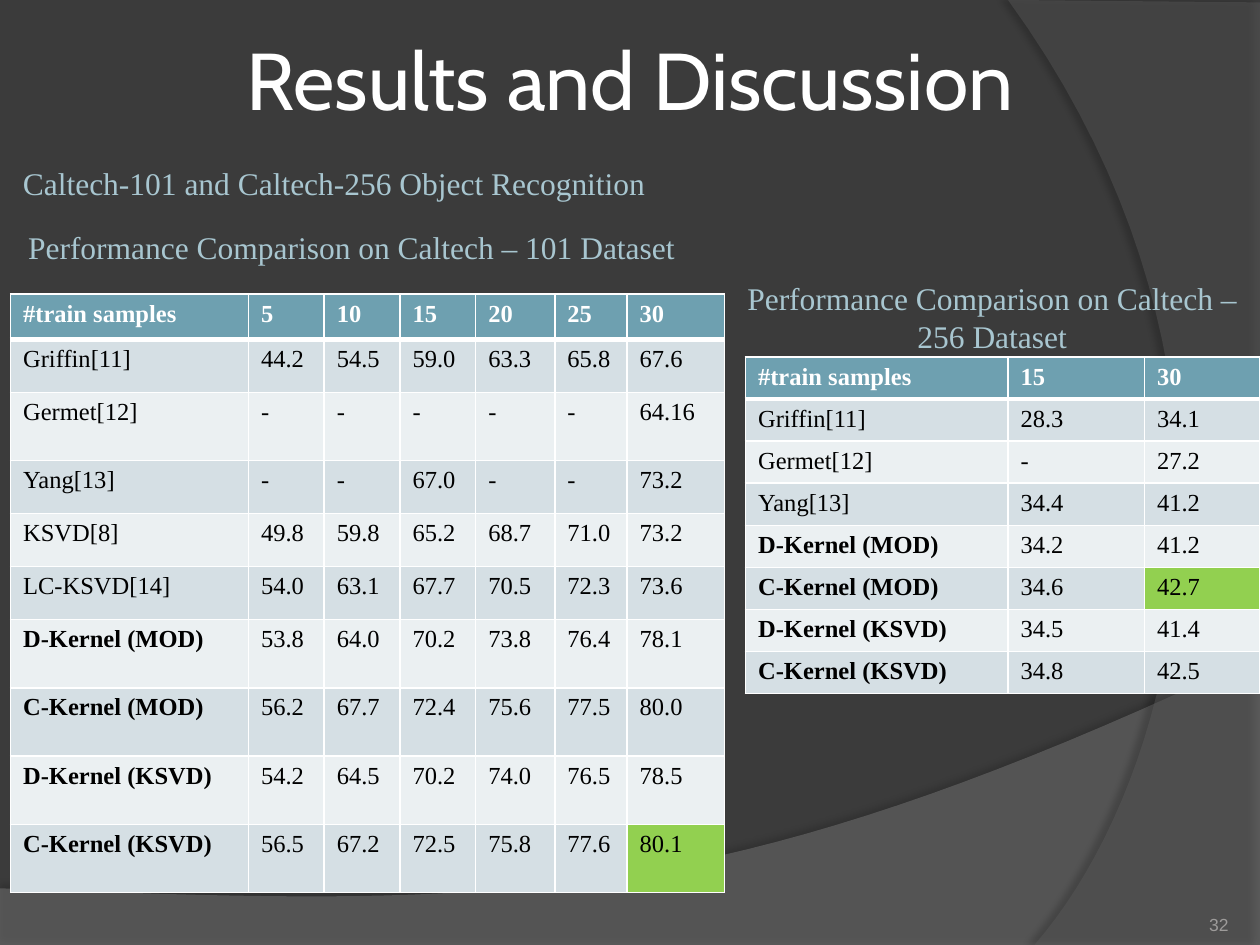
import pptx
import pptx.util
import pptx.dml.color
import pptx.enum.text
import pptx.oxml
import pptx.oxml.ns
from lxml import etree

Pt = pptx.util.Pt
RGBColor = pptx.dml.color.RGBColor
Align = pptx.enum.text.PP_ALIGN
Anchor = pptx.enum.text.MSO_ANCHOR

BACKGROUND = RGBColor(0x3B, 0x3B, 0x3B)
WAVE = RGBColor(0x7F, 0x7F, 0x7F)
SIDE = RGBColor(0x5E, 0x5E, 0x5E)
WHITE = RGBColor(0xFF, 0xFF, 0xFF)
BLACK = RGBColor(0, 0, 0)
PALE_BLUE = RGBColor(0xA8, 0xC6, 0xD0)
HEADER = RGBColor(0x6E, 0xA0, 0xB0)
BANDS = (RGBColor(0xEB, 0xF0, 0xF2), RGBColor(0xD5, 0xDF, 0xE4))
BEST = RGBColor(0x92, 0xD0, 0x50)
GREY = RGBColor(0x9D, 0x9B, 0x9A)
SERIF = "Times New Roman"
NS = 'xmlns:a="http://schemas.openxmlformats.org/drawingml/2006/main"'


def bezier(start, control1, control2, end, steps=40):
    """Points along a cubic curve, without its start."""
    points = []
    for step in range(1, steps + 1):
        t = step / steps
        weights = ((1 - t) ** 3, 3 * t * (1 - t) ** 2, 3 * t * t * (1 - t), t ** 3)
        corners = (start, control1, control2, end)
        points.append(tuple(sum(w * c[axis] for w, c in zip(weights, corners))
                            for axis in (0, 1)))
    return points


class SlideBuilder:
    def __init__(self, page):
        self.page = page
        fill = page.background.fill
        fill.solid()
        fill.fore_color.rgb = BACKGROUND

    def backdrop(self, points, color, opacity, shadow):
        """Translucent outline; shadow is opacity, blur, distance, direction."""
        points = [(x * 100, y * 100) for x, y in points]
        builder = self.page.shapes.build_freeform(*points[0], scale=Pt(1) / 100)
        builder.add_line_segments(points[1:], close=True)
        shape = builder.convert_to_shape()
        shape.fill.solid()
        shape.fill.fore_color.rgb = color
        shape.line.fill.background()
        tint = shape.fill._xPr.find(".//" + pptx.oxml.ns.qn("a:srgbClr"))
        etree.SubElement(tint, pptx.oxml.ns.qn("a:alpha"), val=str(opacity * 1000))
        strength, blur, distance, direction = shadow
        shape._element.spPr.append(pptx.oxml.parse_xml(
            f'<a:effectLst {NS}><a:outerShdw blurRad="{Pt(blur)}" dist="{Pt(distance)}" '
            f'dir="{direction * 60000}" algn="ctr" rotWithShape="0"><a:srgbClr val="000000">'
            f'<a:alpha val="{strength * 1000}"/></a:srgbClr></a:outerShdw></a:effectLst>'))

    def text(self, words, left, top, width, height, size=18, font=SERIF,
             color=PALE_BLUE, align=Align.CENTER, anchor=Anchor.TOP,
             inset=None, wrap=True):
        box = self.page.shapes.add_textbox(Pt(left), Pt(top), Pt(width), Pt(height))
        frame = box.text_frame
        frame.word_wrap = wrap
        frame.vertical_anchor = anchor
        if inset is not None:
            frame.margin_left = frame.margin_right = Pt(inset)
            frame.margin_top = frame.margin_bottom = Pt(inset)
        paragraph = frame.paragraphs[0]
        paragraph.text = words
        paragraph.alignment = align
        self.style(paragraph, size, font, color)

    def style(self, paragraph, size, font, color, bold=False):
        paragraph.font.size = Pt(size)
        paragraph.font.name = font
        paragraph.font.color.rgb = color
        paragraph.font.bold = bold

    def borders(self, cell, top, bottom):
        properties = cell._tc.get_or_add_tcPr()
        widths = {"lnL": 1, "lnR": 1, "lnT": top, "lnB": bottom}
        for index, (side, width) in enumerate(widths.items()):
            properties.insert(index, pptx.oxml.parse_xml(
                f'<a:{side} {NS} w="{Pt(width)}"><a:solidFill>'
                f'<a:srgbClr val="{WHITE}"/></a:solidFill></a:{side}>'))

    def table(self, rows, left, top, widths, heights, best):
        frame = self.page.shapes.add_table(len(rows), len(widths), Pt(left), Pt(top),
                                           Pt(sum(widths)), Pt(sum(heights)))
        table = frame.table
        for column, width in zip(table.columns, widths):
            column.width = Pt(width)
        for r, values in enumerate(rows):
            table.rows[r].height = Pt(heights[r])
            for c, value in enumerate(values):
                cell = table.cell(r, c)
                paragraph = cell.text_frame.paragraphs[0]
                paragraph.text = value
                bold = r == 0 or "Kernel" in value
                self.style(paragraph, 14, SERIF, BLACK if r else WHITE, bold)
                cell.fill.solid()
                band = BANDS[r % 2] if r else HEADER
                cell.fill.fore_color.rgb = BEST if (r, c) == best else band
                self.borders(cell, 3 if r == 1 else 1, 3 if r == 0 else 1)


CALTECH_101 = [
    ("#train samples", "5", "10", "15", "20", "25", "30"),
    ("Griffin[11]", "44.2", "54.5", "59.0", "63.3", "65.8", "67.6"),
    ("Germet[12]", "-", "-", "-", "-", "-", "64.16"),
    ("Yang[13]", "-", "-", "67.0", "-", "-", "73.2"),
    ("KSVD[8]", "49.8", "59.8", "65.2", "68.7", "71.0", "73.2"),
    ("LC-KSVD[14]", "54.0", "63.1", "67.7", "70.5", "72.3", "73.6"),
    ("D-Kernel (MOD)", "53.8", "64.0", "70.2", "73.8", "76.4", "78.1"),
    ("C-Kernel (MOD)", "56.2", "67.7", "72.4", "75.6", "77.5", "80.0"),
    ("D-Kernel (KSVD)", "54.2", "64.5", "70.2", "74.0", "76.5", "78.5"),
    ("C-Kernel (KSVD)", "56.5", "67.2", "72.5", "75.8", "77.6", "80.1"),
]
CALTECH_256 = [
    ("#train samples", "15", "30"),
    ("Griffin[11]", "28.3", "34.1"),
    ("Germet[12]", "-", "27.2"),
    ("Yang[13]", "34.4", "41.2"),
    ("D-Kernel (MOD)", "34.2", "41.2"),
    ("C-Kernel (MOD)", "34.6", "42.7"),
    ("D-Kernel (KSVD)", "34.5", "41.4"),
    ("C-Kernel (KSVD)", "34.8", "42.5"),
]


def main():
    deck = pptx.Presentation()
    deck.slide_width, deck.slide_height = Pt(720), Pt(540)
    slide = SlideBuilder(deck.slides.add_slide(deck.slide_layouts[6]))

    # Backdrop curves
    wave = [(0, 507.6), (0, 540.7), (720, 540.7), (720, 374.4)]
    wave += bezier(wave[-1], (402.5, 524.9), (281.5, 517.7), wave[0])
    slide.backdrop(wave, WAVE, 45, (35, 4, 3.5, 270))
    side = [(720, 1.4), (720, 540), (591.1, 540)]
    side += bezier(side[-1], (673.2, 445.7), (733, 216), (576, 0))
    slide.backdrop(side, SIDE, 40, (45, 4, 4, 180))

    # Title and subject
    slide.text("Results and Discussion", 0, 0, 720, 90, size=46, font="Cabin",
               color=WHITE, anchor=Anchor.MIDDLE, inset=3.6)
    slide.text("Caltech-101 and Caltech-256 Object Recognition", 6, 90, 373.7, 29,
               align=Align.LEFT, wrap=False)

    # Caltech-101 results
    slide.table(CALTECH_101, 6, 168, (136, 43.3, 43.3, 43.3, 45.2, 41.3, 55.6),
                (26, 30.3, 39, 30.3, 30.3, 30.3, 39, 39, 39, 39), best=(9, 6))
    slide.text("Performance Comparison on Caltech – 101 Dataset", 0, 126.5, 402, 29)

    # Caltech-256 results
    slide.table(CALTECH_256, 426, 204, (150, 78, 66), [24] * 8, best=(5, 2))
    slide.text("Performance Comparison on Caltech – 256 Dataset", 414, 156, 306, 51)

    # Page number
    slide.text("32", 642, 505.5, 60, 28.8, size=10, font="Arial", color=GREY,
               align=Align.RIGHT, anchor=Anchor.BOTTOM, inset=0)

    deck.save("out.pptx")


if __name__ == "__main__":
    main()
